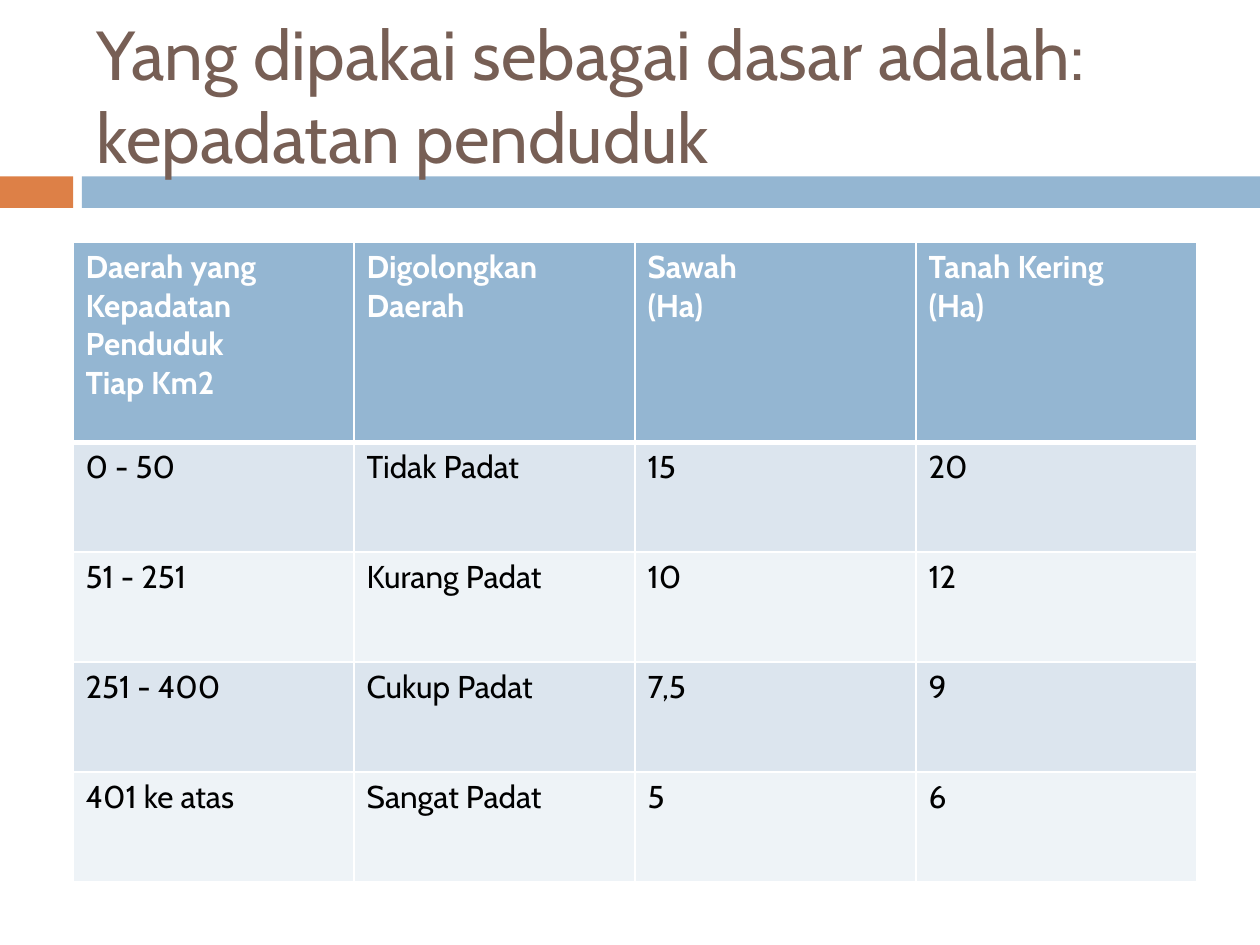
from lxml import etree
from pptx import Presentation
from pptx.dml.color import RGBColor
from pptx.enum.shapes import MSO_SHAPE
from pptx.enum.text import MSO_ANCHOR
from pptx.oxml.ns import qn
from pptx.util import Inches, Pt

RECT = MSO_SHAPE.RECTANGLE
MIDDLE = MSO_ANCHOR.MIDDLE
FONT = "Cabin"
COLORS = {
    "orange": "DD8047", "blue": "94B6D2", "title": "775F55", "white": "FFFFFF",
    "black": "000000", "band_dark": "DCE5EE", "band_light": "EEF3F7",
}
TITLE_FORMAT = {"name": FONT, "size": Pt(39.6), "bold": False}
HEADER_FORMAT = {"name": FONT, "size": Pt(18), "bold": True}
BODY_FORMAT = {"name": FONT, "size": Pt(18), "bold": False}

ROWS = [
    ["Daerah yang\nKepadatan Penduduk\nTiap Km2", "Digolongkan Daerah",
     "Sawah\n(Ha)", "Tanah Kering\n(Ha)"],
    ["0 - 50", "Tidak Padat", "15", "20"],
    ["51 - 251", "Kurang Padat", "10", "12"],
    ["251 - 400", "Cukup Padat", "7,5", "9"],
    ["401 ke atas", "Sangat Padat", "5", "6"],
]


def rgb(name):
    return RGBColor.from_string(COLORS[name])


def write_text(tf, text, font_format, color):
    """Fill a text frame, one paragraph for each line of text."""
    for i, line in enumerate(text.split("\n")):
        p = tf.add_paragraph() if i else tf.paragraphs[0]
        r = p.add_run()
        r.text = line
        for key, value in font_format.items():
            setattr(r.font, key, value)
        r.font.color.rgb = rgb(color)


def add_bars(s, left, top, width, height):
    """Draw the short orange bar and the long blue bar beside it."""
    short, gap = 0.58, 0.07
    long_left = left + short + gap
    for x, w, color in ((left, short, "orange"),
                        (long_left, left + width - long_left, "blue")):
        bar = s.shapes.add_shape(RECT, Inches(x), Inches(top), Inches(w), Inches(height))
        bar.shadow.inherit = False
        bar.fill.solid()
        bar.fill.fore_color.rgb = rgb(color)
        bar.line.fill.background()


def add_title(s, left, top, width, height):
    sp = s.shapes.add_textbox(Inches(left), Inches(top), Inches(width), Inches(height))
    tf = sp.text_frame
    tf.word_wrap = True
    tf.vertical_anchor = MIDDLE
    write_text(tf, "Yang dipakai sebagai dasar adalah: kepadatan penduduk",
               TITLE_FORMAT, "title")


def set_borders(cell, widths):
    """Give a cell white borders; widths maps each side to points."""
    tc_pr = cell._tc.get_or_add_tcPr()
    for side, width in widths.items():
        ln = etree.SubElement(tc_pr, qn(f"a:ln{side}"), w=str(Pt(width)))
        fill = etree.SubElement(ln, qn("a:solidFill"))
        etree.SubElement(fill, qn("a:srgbClr"), val=COLORS["white"])


def add_density_table(s, left, top, width, height):
    header_height = 1.59
    body_height = (height - header_height) / (len(ROWS) - 1)
    table = s.shapes.add_table(len(ROWS), len(ROWS[0]), Inches(left), Inches(top),
                               Inches(width), Inches(height)).table
    for col in table.columns:
        col.width = Inches(width / len(ROWS[0]))
    for i, values in enumerate(ROWS):
        header = i == 0
        table.rows[i].height = Inches(header_height if header else body_height)
        band = "blue" if header else "band_dark" if i % 2 else "band_light"
        borders = {"L": 1, "R": 1, "T": 3 if i == 1 else 1, "B": 3 if header else 1}
        for j, text in enumerate(values):
            cell = table.cell(i, j)
            set_borders(cell, borders)
            cell.fill.solid()
            cell.fill.fore_color.rgb = rgb(band)
            write_text(cell.text_frame, text, HEADER_FORMAT if header else BODY_FORMAT,
                       "white" if header else "black")


def main():
    prs = Presentation()
    prs.slide_width, prs.slide_height = Inches(10), Inches(7.5)
    s = prs.slides.add_slide(prs.slide_layouts[6])
    add_bars(s, 0, 1.4, 10, 0.25)
    add_title(s, 0.67, 0.25, 8.92, 1)
    add_density_table(s, 0.58, 1.92, 8.92, 5.08)
    prs.save("out.pptx")


if __name__ == "__main__":
    main()
